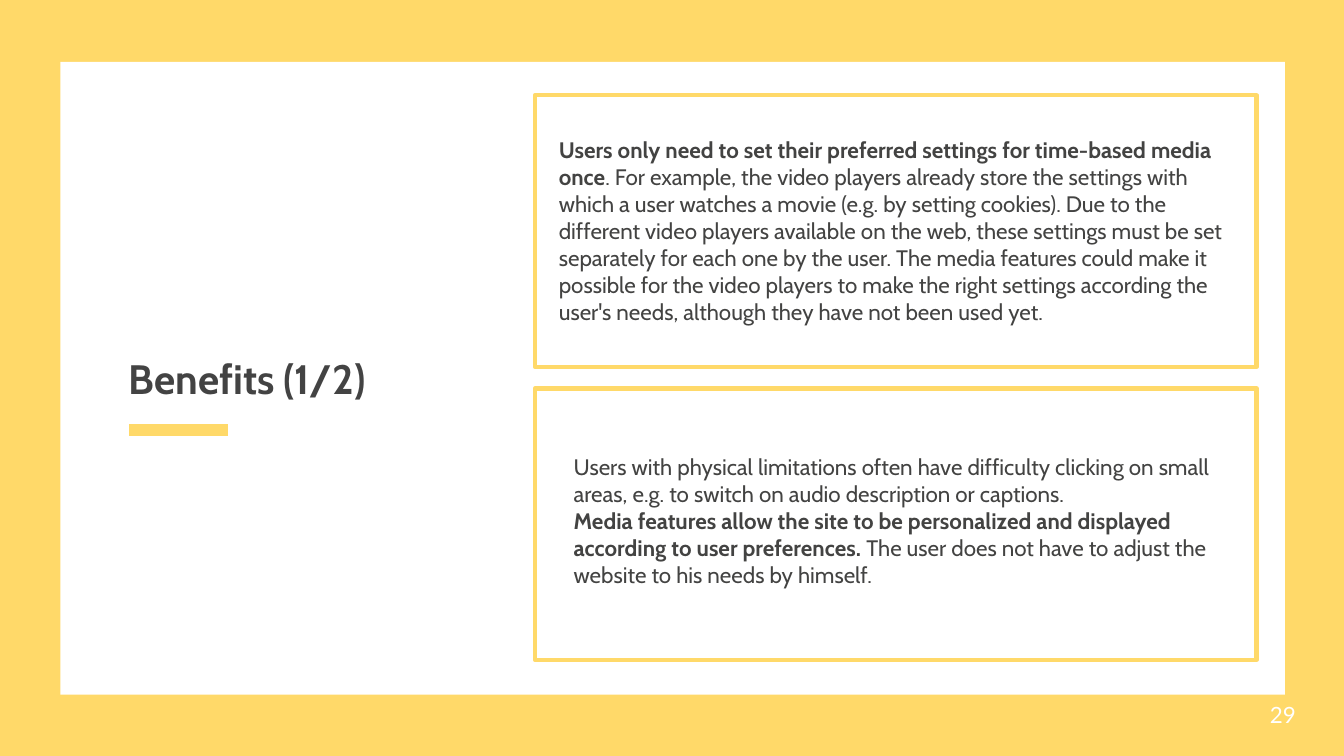
from typing import NamedTuple

from lxml.etree import SubElement
from pptx import Presentation
from pptx.dml.color import RGBColor
from pptx.enum.shapes import MSO_CONNECTOR as CONN, MSO_SHAPE as SHAPE
from pptx.enum.text import MSO_ANCHOR as ANCHOR
from pptx.oxml.ns import qn
from pptx.util import Inches, Pt

COLORS = {"yellow": "FFD969", "white": "FFFFFF", "text": "434342", "title": "434343"}


class Box(NamedTuple):
    left: float
    top: float
    width: float
    height: float


class Part(NamedTuple):
    text: str
    bold: bool = False


class Benefit(NamedTuple):
    box: Box
    lines: list[list[Part]]


CARD = Box(3.98, 0.71, 5.37, 2.02)
CARD_STEP = 2.18

BENEFITS = [
    Benefit(Box(4.06, 0.89, 5.17, 1.65), [[
        Part("Users only need to set their preferred settings for time-based media once", True),
        Part(". For example, the video players already store the settings with which a user "
             "watches a movie (e.g. by setting cookies). Due to the different video players "
             "available on the web, these settings must be set separately for each one by the "
             "user. The media features could make it possible for the video players to make the "
             "right settings according the user's needs, although they have not been used yet."),
    ]]),
    Benefit(Box(4.17, 3.03, 5.06, 1.69), [
        [Part("Users with physical limitations often have difficulty clicking on small areas, "
              "e.g. to switch on audio description or captions. ")],
        [Part("Media features allow the site to be personalized and displayed according to "
              "user preferences. ", True),
         Part("The user does not have to adjust the website to his needs by himself.")],
    ]),
]


def rgb(name: str) -> RGBColor:
    return RGBColor.from_string(COLORS[name])


def add_rect(s, box: Box, fill: str | None = None, line: str | None = None) -> None:
    sp = s.shapes.add_shape(SHAPE.RECTANGLE, *map(Inches, box))
    sp.shadow.inherit = False
    if fill:
        sp.fill.solid()
        sp.fill.fore_color.rgb = rgb(fill)
    else:
        sp.fill.background()
    if line:
        sp.line.color.rgb = rgb(line)
        sp.line.width = Pt(2.25)
        SubElement(sp._element.spPr.find(qn("a:ln")), qn("a:round"))
    else:
        sp.line.fill.background()


def add_rule(s, left: float, right: float, y: float, color: str, width: float) -> None:
    cx = s.shapes.add_connector(CONN.STRAIGHT, *map(Inches, (left, y, right, y)))
    cx.line.color.rgb = rgb(color)
    cx.line.width = Pt(width)
    SubElement(cx._element.spPr, qn("a:effectLst"))


def add_text(s, box: Box, lines: list[list[Part]], *, size: float = 12,
             font: str = "Cabin", color: str = "text") -> None:
    tf = s.shapes.add_textbox(*map(Inches, box)).text_frame
    tf.word_wrap = True
    tf.vertical_anchor = ANCHOR.MIDDLE
    tf.margin_left = tf.margin_right = tf.margin_top = tf.margin_bottom = Inches(0.1)
    p = tf.paragraphs[0]
    for i, parts in enumerate(lines):
        if i:
            p.add_line_break()
        for part in parts:
            r = p.add_run()
            r.text = part.text
            r.font.name = font
            r.font.size = Pt(size)
            r.font.bold = part.bold
            r.font.color.rgb = rgb(color)


def main() -> None:
    """Build the benefits slide."""
    prs = Presentation()
    prs.slide_width = Inches(10)
    prs.slide_height = Inches(10 * 9 / 16)
    s = prs.slides.add_slide(prs.slide_layouts[6])
    s.background.fill.solid()
    s.background.fill.fore_color.rgb = rgb("yellow")

    add_rect(s, Box(0.45, 0.46, 9.11, 4.71), fill="white")
    add_rule(s, 0.96, 1.7, 3.2, "yellow", 6)
    for i, benefit in enumerate(BENEFITS):
        add_rect(s, CARD._replace(top=CARD.top + i * CARD_STEP), line="yellow")
        add_text(s, benefit.box, benefit.lines)
    add_text(s, Box(9.35, 5.1, 0.6, 0.43), [[Part("29")]], font="Lato", color="white")
    add_text(s, Box(0.86, 1.9, 2.78, 1.82), [[Part("Benefits (1/2)", True)]],
             size=22, color="title")
    prs.save("out.pptx")


if __name__ == "__main__":
    main()
